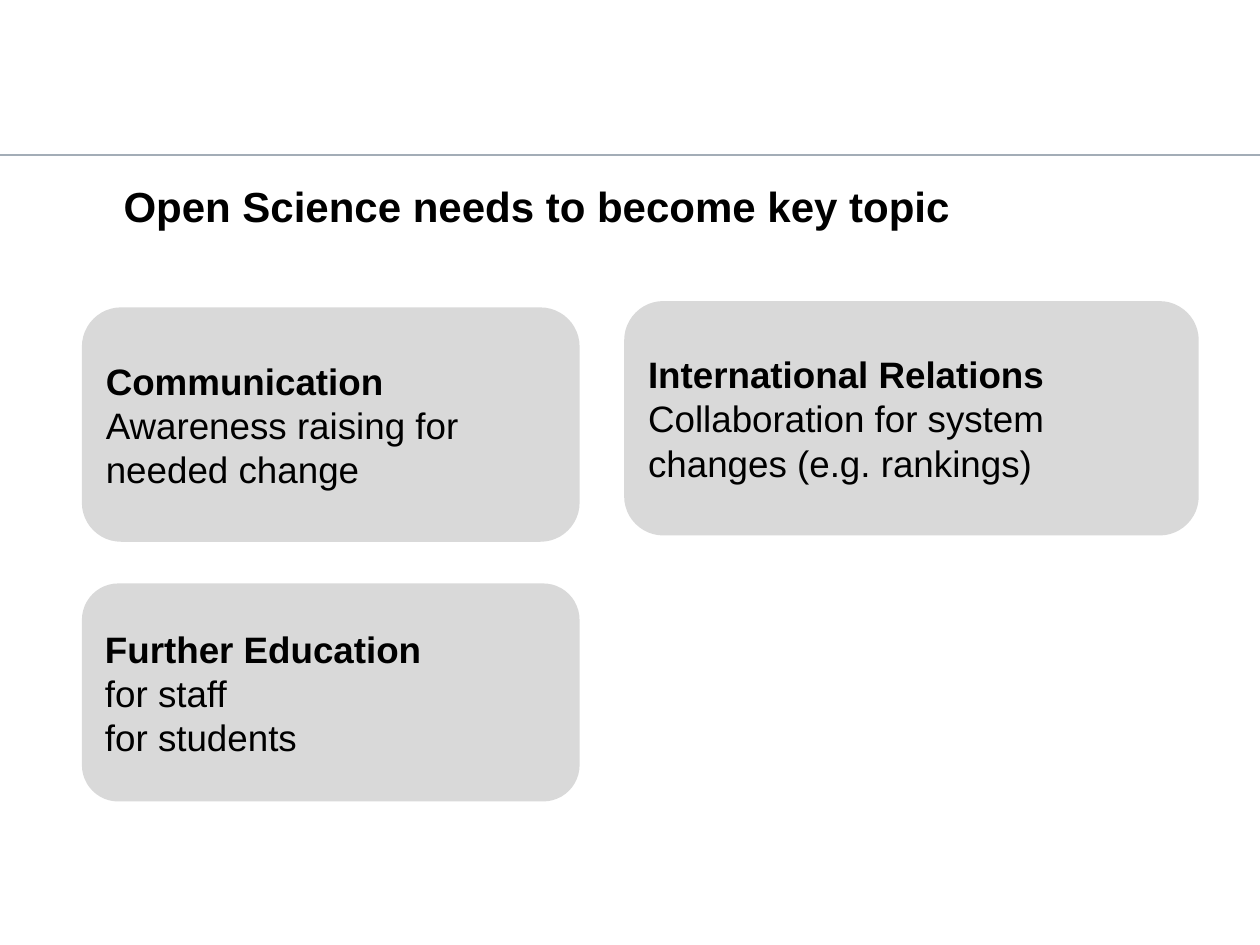
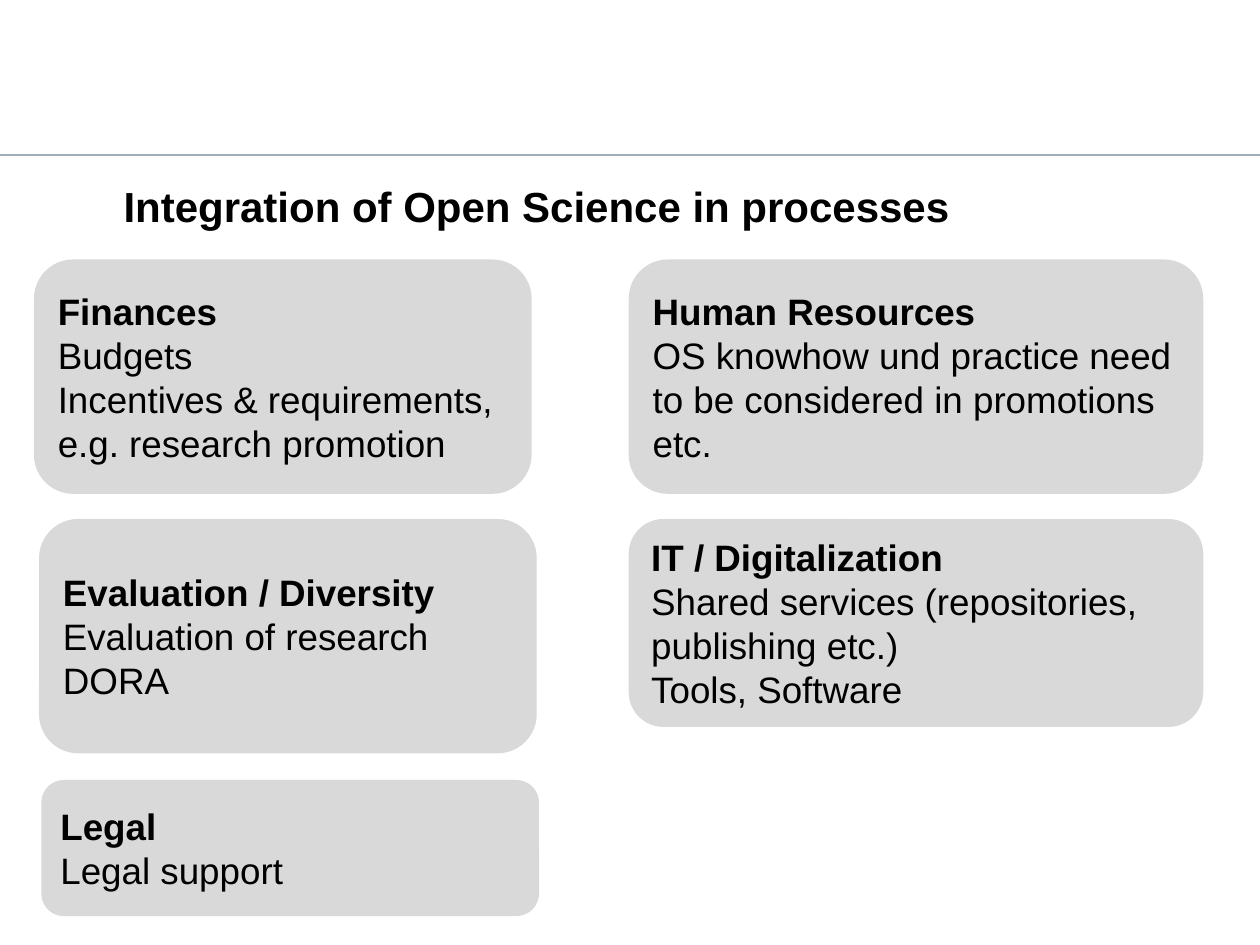
from lxml.etree import SubElement
from pptx import Presentation
from pptx.dml.color import RGBColor
from pptx.enum.shapes import MSO_CONNECTOR as LINE, MSO_SHAPE as SHAPE
from pptx.enum.text import MSO_ANCHOR as ANCHOR, PP_ALIGN as ALIGN
from pptx.oxml.ns import qn
from pptx.util import Pt

# Shared look
BLACK = RGBColor(0x00, 0x00, 0x00)
GREY = RGBColor(0xD9, 0xD9, 0xD9)
RULE = RGBColor(0xA3, 0xAD, 0xB7)
FONT = "Arial"
WIDTH, HEIGHT = 720, 540
LEFT_W, RIGHT_W = 284.4, 328.3  # card widths in the two columns
TALL = 133.9  # usual card height

# Each card: left, top, width, height, heading and lines
DECK = [
    ("Open Science needs to become key topic", [
        (46.8, 175.7, LEFT_W, TALL,
         ["Communication", "Awareness raising for needed change"]),
        (356.7, 172.1, RIGHT_W, TALL,
         ["International Relations",
          "Collaboration for system changes (e.g. rankings)"]),
        (46.8, 333.4, LEFT_W, 124.6,
         ["Further Education", "for staff", "for students"]),
    ]),
    ("Integration of Open Science in processes", [
        (359.3, 148.3, RIGHT_W, TALL,
         ["Human Resources",
          "OS knowhow und practice need to be considered in promotions etc."]),
        (19.4, 148.3, LEFT_W, TALL,
         ["Finances", "Budgets",
          "Incentives & requirements, e.g. research promotion"]),
        (22.3, 296.6, LEFT_W, TALL,
         ["Evaluation / Diversity", "Evaluation of research", "DORA"]),
        (359.3, 296.6, RIGHT_W, 118.8,
         ["IT / Digitalization",
          "Shared services (repositories, publishing etc.)",
          "Tools, Software"]),
        (23.6, 445.7, LEFT_W, 77.8, ["Legal", "Legal support"]),
    ]),
]


def write(lines, shape, size, pad, anchor):
    """Fill a shape with left-aligned lines, the first one bold."""
    frame = shape.text_frame
    frame.word_wrap = True
    frame.vertical_anchor = anchor
    (frame.margin_left, frame.margin_top,
     frame.margin_right, frame.margin_bottom) = [Pt(side) for side in pad]
    for i, line in enumerate(lines):
        para = frame.add_paragraph() if i else frame.paragraphs[0]
        para.alignment = ALIGN.LEFT
        run = para.add_run()
        run.text = line
        run.font.name = FONT
        run.font.size = Pt(size)
        run.font.bold = i == 0
        run.font.color.rgb = BLACK


deck = Presentation()
deck.slide_width, deck.slide_height = Pt(WIDTH), Pt(HEIGHT)

for title, cards in DECK:
    slide = deck.slides.add_slide(deck.slide_layouts[6])
    shapes = slide.shapes

    # Rule under the header
    rule = shapes.add_connector(
        LINE.STRAIGHT, Pt(0), Pt(88.5), Pt(WIDTH), Pt(88.5))
    rule.line.color.rgb = RULE
    rule.line.width = Pt(1.25)
    SubElement(rule._element.spPr, qn("a:effectLst"))

    # Title
    head = shapes.add_textbox(Pt(70.6), Pt(100.1), Pt(578.2), Pt(39.6))
    write([title], head, size=24, pad=(0, 2.9, 0, 0), anchor=ANCHOR.TOP)

    # Cards
    for left, top, width, height, lines in cards:
        card = shapes.add_shape(
            SHAPE.ROUNDED_RECTANGLE, Pt(left), Pt(top), Pt(width), Pt(height))
        card.adjustments[0] = 0.167
        card.shadow.inherit = False
        card.fill.solid()
        card.fill.fore_color.rgb = GREY
        card.line.fill.background()
        write(lines, card, size=21, pad=[7.2] * 4, anchor=ANCHOR.MIDDLE)

deck.save("out.pptx")
